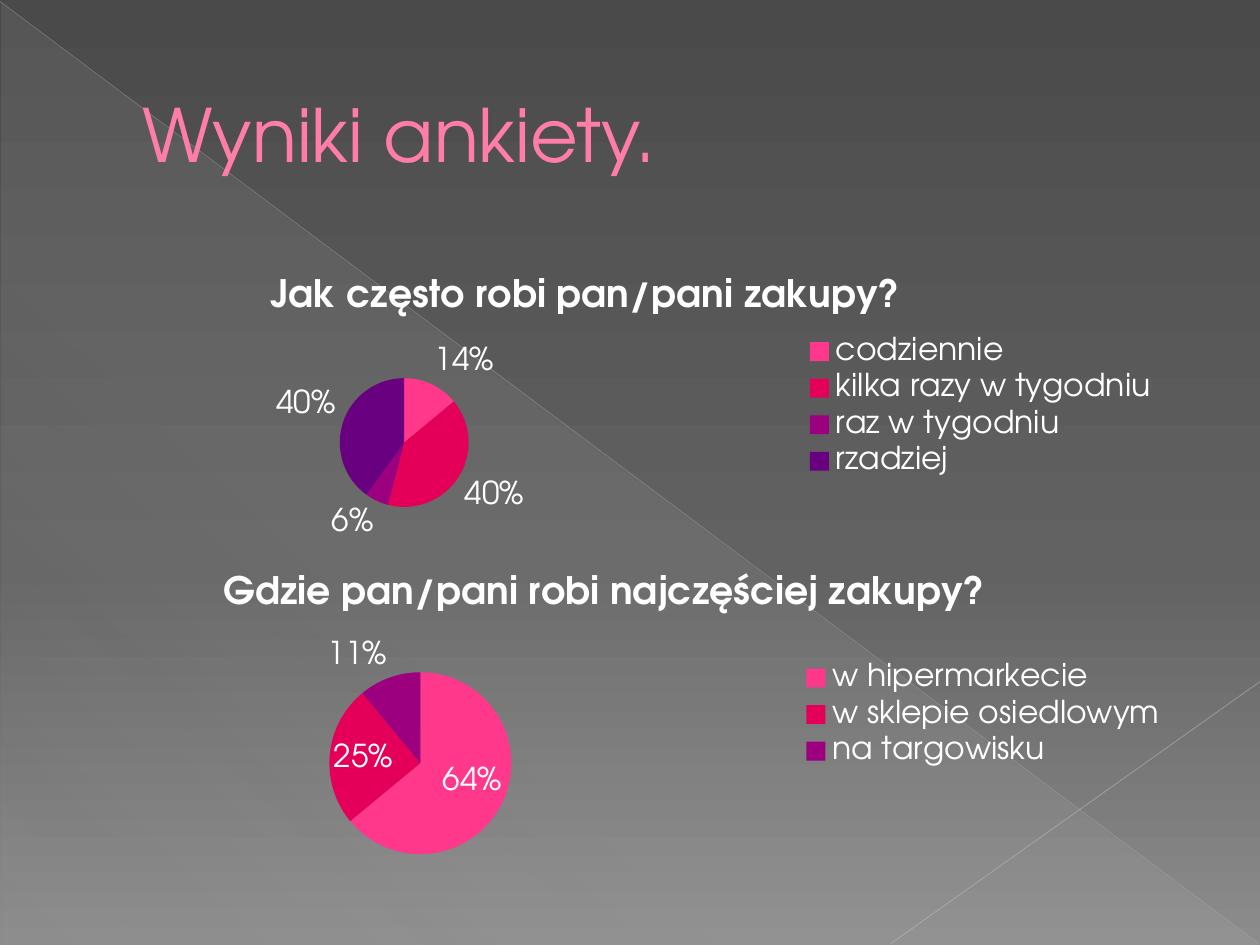
from lxml.etree import SubElement
from pptx import Presentation
from pptx.chart.data import CategoryChartData
from pptx.dml.color import RGBColor
from pptx.enum.chart import XL_CHART_TYPE, XL_LABEL_POSITION, XL_LEGEND_POSITION
from pptx.enum.shapes import MSO_CONNECTOR, MSO_SHAPE
from pptx.enum.text import MSO_ANCHOR
from pptx.oxml.ns import qn
from pptx.util import Cm, Pt

FONT = "TeX Gyre Adventor"
WHITE = RGBColor(0xFF, 0xFF, 0xFF)
TITLE_PINK = RGBColor(0xFF, 0x7D, 0xA7)
TITLE_EDGE = RGBColor(0xB1, 0x27, 0x61)
DARK_GREY = RGBColor(0x4A, 0x4A, 0x4A)
MID_GREY = RGBColor(0x62, 0x62, 0x62)
LIGHT_GREY = RGBColor(0x8C, 0x8C, 0x8C)
VEIL_GREY = RGBColor(0xD2, 0xD2, 0xD2)
DIAGONAL_GREY = RGBColor(0xBF, 0xBF, 0xBF)
CORNER_GREY = RGBColor(0xC6, 0xC6, 0xC6)
SLICES = (
    RGBColor(0xFF, 0x38, 0x8C),
    RGBColor(0xE4, 0x00, 0x59),
    RGBColor(0x9C, 0x00, 0x7F),
    RGBColor(0x68, 0x00, 0x7F),
)


class SurveySlide:
    """Style and drawing methods for one slide."""

    def __init__(self, slide):
        self.slide = slide

    @staticmethod
    def set_alpha(color_element, percent):
        SubElement(color_element, qn("a:alpha"), val=str(percent * 1000))

    def set_gradient(self, owner, stops, angle):
        gradient = owner.find(".//" + qn("a:gradFill"))
        stop_list = gradient.find(qn("a:gsLst"))
        for old_stop in list(stop_list):
            stop_list.remove(old_stop)
        for position, color, opacity in stops:
            stop = SubElement(stop_list, qn("a:gs"), pos=str(position * 1000))
            shade = SubElement(stop, qn("a:srgbClr"), val=str(color))
            if opacity < 100:
                self.set_alpha(shade, opacity)
        gradient.find(qn("a:lin")).set("ang", str(angle * 60000))

    def background(self, stops, angle):
        self.slide.background.fill.gradient()
        self.set_gradient(self.slide.element, stops, angle)

    def veil(self, left, top, width, height, stops, angle):
        triangle = self.slide.shapes.add_shape(
            MSO_SHAPE.RIGHT_TRIANGLE, Cm(left), Cm(top), Cm(width), Cm(height))
        triangle.shadow.inherit = False
        triangle.line.fill.background()
        triangle.fill.gradient()
        self.set_gradient(triangle.element, stops, angle)

    def line(self, start, end, color, weight, opacity):
        line = self.slide.shapes.add_connector(
            MSO_CONNECTOR.STRAIGHT, *(Cm(value) for value in start + end))
        line.line.width = Pt(weight)
        line.line.color.rgb = color
        properties = line.element.spPr
        self.set_alpha(properties.find(".//" + qn("a:srgbClr")), opacity)
        SubElement(properties, qn("a:effectLst"))

    def title(self, text, left, top, width, height):
        heading = self.slide.shapes.add_textbox(
            Cm(left), Cm(top), Cm(width), Cm(height))
        frame = heading.text_frame
        frame.word_wrap = True
        frame.vertical_anchor = MSO_ANCHOR.MIDDLE
        frame.margin_left = Cm(1.6)
        frame.text = text
        run = frame.paragraphs[0].runs[0]
        run.font.name = FONT
        run.font.size = Pt(42)
        run.font.color.rgb = TITLE_PINK
        # The outline has to stand before the fill
        properties = run.font._element
        outline = SubElement(properties, qn("a:ln"), w=str(Pt(0.5)))
        edge = SubElement(outline, qn("a:solidFill"))
        SubElement(edge, qn("a:srgbClr"), val=str(TITLE_EDGE))
        properties.insert(0, outline)

    def pie(self, question, answers, box, plot):
        data = CategoryChartData()
        data.categories = list(answers)
        data.add_series(question, list(answers.values()))
        chart = self.slide.shapes.add_chart(
            XL_CHART_TYPE.PIE, *(Cm(value) for value in box), data).chart
        chart.font.name = FONT
        chart.font.size = Pt(18)
        chart.font.color.rgb = WHITE

        chart.has_title = True
        chart.chart_title.text_frame.text = question
        font = chart.chart_title.text_frame.paragraphs[0].runs[0].font
        font.name = FONT
        font.size = Pt(21.6)
        font.bold = True
        font.color.rgb = WHITE

        chart.has_legend = True
        chart.legend.position = XL_LEGEND_POSITION.RIGHT
        chart.legend.include_in_layout = False

        pie = chart.plots[0]
        pie.vary_by_categories = True
        for index, color in zip(range(len(answers)), SLICES):
            slice_fill = pie.series[0].points[index].format.fill
            slice_fill.solid()
            slice_fill.fore_color.rgb = color
        pie.has_data_labels = True
        labels = pie.data_labels
        labels.show_value = False
        labels.show_percentage = True
        labels.number_format = "0%"
        labels.number_format_is_linked = False
        labels.position = XL_LABEL_POSITION.BEST_FIT
        self.place_plot(chart, plot)

    @staticmethod
    def place_plot(chart, plot):
        """Set the pie's place as fractions of the chart."""
        area = chart.element.find(".//" + qn("c:plotArea"))
        for old_layout in area.findall(qn("c:layout")):
            area.remove(old_layout)
        layout = SubElement(area, qn("c:layout"))
        area.insert(0, layout)
        manual = SubElement(layout, qn("c:manualLayout"))
        settings = [("layoutTarget", "inner"), ("xMode", "edge"), ("yMode", "edge")]
        for name, value in settings + list(zip("xywh", plot)):
            SubElement(manual, qn("c:" + name), val=str(value))


def main():
    presentation = Presentation()
    presentation.slide_width = Cm(25.4)
    presentation.slide_height = Cm(19.05)
    survey = SurveySlide(presentation.slides.add_slide(presentation.slide_layouts[6]))

    # Backdrop
    survey.background(
        [(0, DARK_GREY, 100), (60, MID_GREY, 100), (100, LIGHT_GREY, 100)], 90)
    survey.veil(0.03, 0.05, 25.35, 19,
                [(0, VEIL_GREY, 10), (70, VEIL_GREY, 8), (100, VEIL_GREY, 1)], 133)
    survey.line((0, 0.03), (25.37, 19.02), DIAGONAL_GREY, 0.39, 35)
    survey.line((25.4, 13.74), (17.96, 19.02), CORNER_GREY, 0.47, 45)

    # Heading
    survey.title("Wyniki ankiety.", 1.27, 0.74, 22.86, 3.89)

    # Survey questions
    survey.pie(
        "Jak często robi pan/pani zakupy?",
        {"codziennie": 14, "kilka razy w tygodniu": 40,
         "raz w tygodniu": 6, "rzadziej": 40},
        box=(0, 5.16, 23.62, 6.07), plot=(0.29, 0.4, 0.11, 0.44))
    survey.pie(
        "Gdzie pan/pani robi najczęściej zakupy?",
        {"w hipermarkecie": 64, "w sklepie osiedlowym": 25, "na targowisku": 11},
        box=(0.58, 11.13, 23.22, 6.55), plot=(0.26, 0.37, 0.16, 0.56))

    presentation.save("out.pptx")


if __name__ == "__main__":
    main()
